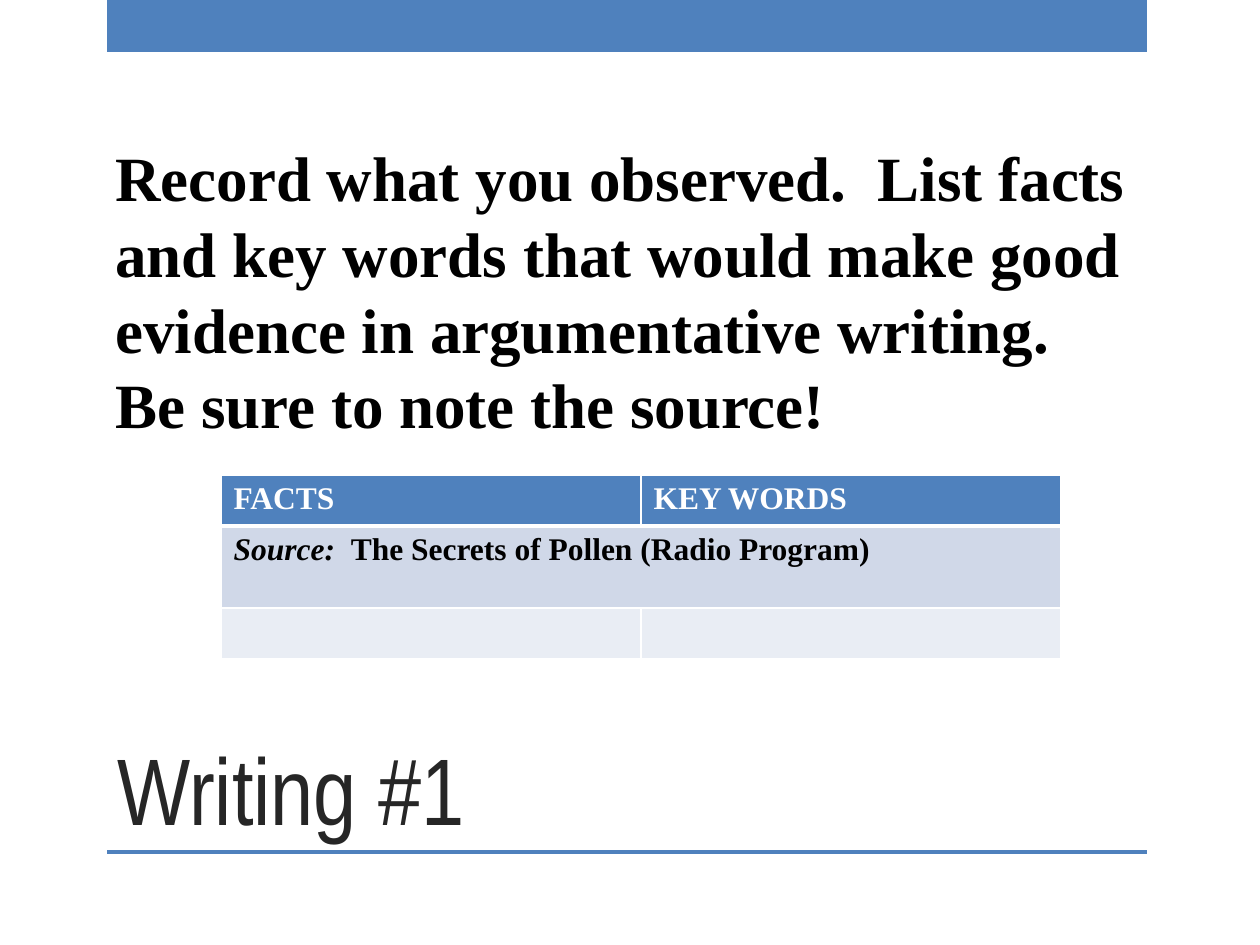
import dataclasses

import lxml.etree
import pptx
import pptx.dml.color
import pptx.enum.shapes
import pptx.enum.text
import pptx.oxml.ns
import pptx.util

EMU_PER_PX = 914400 // 126


def px(length):
    return pptx.util.Emu(length * EMU_PER_PX)


@dataclasses.dataclass(frozen=True)
class Theme:
    accent: str = "4F81BD"
    title: str = "262626"
    ink: str = "000000"
    white: str = "FFFFFF"
    band_dark: str = "D0D8E8"
    band_light: str = "E9EDF4"
    title_font: str = "Arial Narrow"
    body_font: str = "Times New Roman"
    title_size: int = 54
    body_size: int = 36
    body_leading: float = 43.2
    table_size: int = 18


class SlideBuilder:
    """Draws styled elements on the current slide."""

    def __init__(self, slide, theme):
        self.slide = slide
        self.theme = theme

    def bar(self, left, top, width, height):
        shape = self.slide.shapes.add_shape(
            pptx.enum.shapes.MSO_SHAPE.RECTANGLE, px(left), px(top), px(width), px(height))
        shape.shadow.inherit = False
        self.fill(shape, self.theme.accent)
        shape.line.fill.background()

    def fill(self, target, color):
        target.fill.solid()
        target.fill.fore_color.rgb = pptx.dml.color.RGBColor.from_string(color)

    def run(self, paragraph, text, font, size, color, bold=False, italic=False):
        run = paragraph.add_run()
        run.text = text
        run.font.name = font
        run.font.size = pptx.util.Pt(size)
        run.font.bold = bold
        run.font.italic = italic
        run.font.color.rgb = pptx.dml.color.RGBColor.from_string(color)

    def text_box(self, left, top, width, height, anchor):
        shape = self.slide.shapes.add_textbox(px(left), px(top), px(width), px(height))
        frame = shape.text_frame
        frame.word_wrap = True
        frame.vertical_anchor = anchor
        return frame

    def title(self, text, left, top, width, height):
        frame = self.text_box(left, top, width, height, pptx.enum.text.MSO_ANCHOR.BOTTOM)
        self.run(frame.paragraphs[0], text, self.theme.title_font,
                 self.theme.title_size, self.theme.title)

    def body(self, text, left, top, width, height, inset_top):
        frame = self.text_box(left, top, width, height, pptx.enum.text.MSO_ANCHOR.TOP)
        frame.margin_top = px(inset_top)
        paragraph = frame.paragraphs[0]
        paragraph.line_spacing = pptx.util.Pt(self.theme.body_leading)
        self.run(paragraph, text, self.theme.body_font,
                 self.theme.body_size, self.theme.ink, bold=True)

    def table(self, left, top, column_widths, row_heights, fills):
        table = self.slide.shapes.add_table(
            len(row_heights), len(column_widths), px(left), px(top),
            px(sum(column_widths)), px(sum(row_heights))).table
        for column, width in zip(table.columns, column_widths):
            column.width = px(width)
        for index, (row, height, color) in enumerate(zip(table.rows, row_heights, fills)):
            row.height = px(height)
            for cell in row.cells:
                top_width, bottom_width = (3 if index == edge else 1 for edge in (1, 0))
                self.borders(cell, {"L": 1, "R": 1, "T": top_width, "B": bottom_width})
                self.fill(cell, color)
        return table

    def borders(self, cell, widths):
        properties = cell._tc.get_or_add_tcPr()
        qn = pptx.oxml.ns.qn
        for side, width in widths.items():
            line = lxml.etree.SubElement(
                properties, qn(f"a:ln{side}"), w=str(pptx.util.Pt(width)))
            solid = lxml.etree.SubElement(line, qn("a:solidFill"))
            lxml.etree.SubElement(solid, qn("a:srgbClr"), val=self.theme.white)

    def cell_run(self, cell, text, color, italic=False):
        self.run(cell.text_frame.paragraphs[0], text, self.theme.body_font,
                 self.theme.table_size, color, bold=True, italic=italic)


def main():
    presentation = pptx.Presentation()
    presentation.slide_width = px(1260)
    presentation.slide_height = px(945)
    theme = Theme()
    slide = presentation.slides.add_slide(presentation.slide_layouts[6])
    builder = SlideBuilder(slide, theme)

    builder.bar(107, 0, 1040, 52)
    builder.bar(107, 850, 1040, 4)
    builder.title("Writing #1", 105, 630, 935, 221)
    builder.body(
        "Record what you observed.  List facts and key words that would make good "
        "evidence in argumentative writing.  Be sure to note the source!",
        103, 53, 1040, 651, inset_top=86)

    table = builder.table(221, 475, [420, 420], [51, 82, 51],
                          [theme.accent, theme.band_dark, theme.band_light])
    for column, heading in enumerate(["FACTS", "KEY WORDS"]):
        builder.cell_run(table.cell(0, column), heading, theme.white)
    source = table.cell(1, 0)
    source.merge(table.cell(1, 1))
    builder.cell_run(source, "Source:  ", theme.ink, italic=True)
    builder.cell_run(source, "The Secrets of Pollen (Radio Program)", theme.ink)

    presentation.save("out.pptx")


if __name__ == "__main__":
    main()
